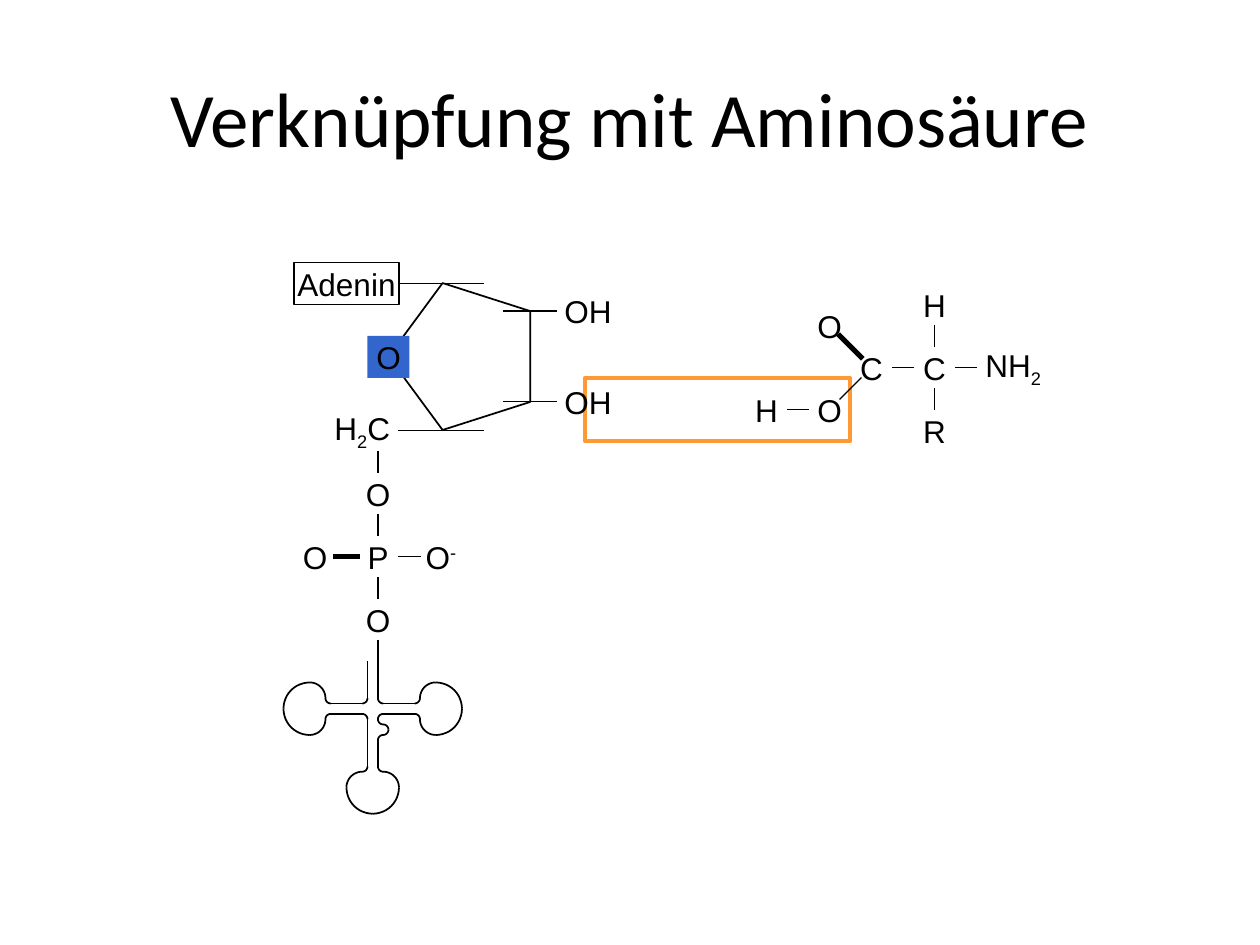
from itertools import pairwise
from math import cos, pi, sin

from lxml.etree import SubElement
from pptx import Presentation
from pptx.dml.color import RGBColor
from pptx.enum.shapes import MSO_CONNECTOR as Conn, MSO_SHAPE as Shape
from pptx.enum.text import MSO_ANCHOR as Anchor, PP_ALIGN as Align
from pptx.oxml.ns import qn
from pptx.util import Inches, Pt

UNIT = Inches(1) // 24
BOX = 8
BLACK, BLUE, ORANGE = "000000", "3366CC", "FF9933"
SUB, SUPER = -25, 30

TITLE = ("Verknüpfung mit Aminosäure", 12, 7.2, 216, 30)
FRAME = (111.4, 72, 50.6, 12)
RING = (73.5, 54.4, 28, 27)

# runs, left, top, width, fill, line
ATOMS = [
    (["P"], 68, 102, BOX, None, None),
    (["O"], 68, 114, BOX, None, None),
    (["O"], 56, 102, BOX, None, None),
    (["O", ("-", SUPER)], 80, 102, BOX, None, None),
    (["O"], 68, 90, BOX, None, None),
    (["H", ("2", SUB), "C"], 62, 78, 14, None, None),
    (["O"], 70, 64, BOX, BLUE, None),
    (["OH"], 106, 72.5, 12, None, None),
    (["OH"], 106, 55.25, 12, None, None),
    (["Adenin"], 56, 50, 20, None, BLACK),
    (["C"], 162, 66, BOX, None, None),
    (["C"], 174, 66, BOX, None, None),
    (["O"], 154, 58, BOX, None, None),
    (["O"], 154, 74, BOX, None, None),
    (["H"], 142, 74, BOX, None, None),
    (["H"], 174, 54, BOX, None, None),
    (["R"], 174, 78, BOX, None, None),
    (["NH", ("2", SUB)], 186, 66, 14, None, None),
]

BONDS = [
    ((72, 114), (72, 110), 1), ((68, 106), (64, 106), 3),
    ((76, 106), (80, 106), 1), ((72, 102), (72, 98), 1),
    ((72, 90), (72, 86), 1), ((76, 82), (92, 82), 1),
    ((96, 76.5), (106, 76.5), 1), ((96, 59.25), (106, 59.25), 1),
    ((76, 54), (92, 54), 1),
    ((178, 66), (178, 62), 1), ((178, 78), (178, 74), 1),
    ((170, 70), (174, 70), 1), ((182, 70), (186, 70), 1),
    ((164, 68), (160, 64), 3), ((160, 76), (164, 72), 0.75),
    ((150, 78), (154, 78), 1),
]

TRNA = [
    (72, 122), (72, 133), (73, 134), (79, 134), (80, 133), (83, 130),
    (88, 135), (83, 140), (80, 137), (79, 136), (73, 136), (72, 137),
    (73, 138), (74, 139), (73, 140), (72, 141), (72, 146), (73, 147),
    (76, 150), (71, 155), (66, 150), (69, 147), (70, 146), (70, 137),
    (69, 136), (63, 136), (62, 137), (59, 140), (54, 135), (59, 130),
    (62, 133), (63, 134), (69, 134), (70, 133), (70, 126),
]


def emu(*values):
    return [round(v * UNIT) for v in values]


def rgb(color):
    return RGBColor.from_string(color)


def style(sp, fill=None, line=None, width=1):
    sp.shadow.inherit = False
    if fill:
        sp.fill.solid()
        sp.fill.fore_color.rgb = rgb(fill)
    else:
        sp.fill.background()
    if line:
        sp.line.color.rgb = rgb(line)
        sp.line.width = Pt(width)
    else:
        sp.line.fill.background()


def write(sp, runs, font, size, wrap=False):
    tf = sp.text_frame
    tf.word_wrap = wrap
    tf.vertical_anchor = Anchor.MIDDLE
    tf.margin_left = tf.margin_right = tf.margin_top = tf.margin_bottom = 0
    p = tf.paragraphs[0]
    p.alignment = Align.CENTER
    p.font.name, p.font.size, p.font.color.rgb = font, Pt(size), rgb(BLACK)
    for run in runs:
        text, shift = (run, 0) if isinstance(run, str) else run
        r = p.add_run()
        r.text = text
        if shift:
            r._r.get_or_add_rPr().set("baseline", str(shift * 1000))


def add_atom(shapes, sites, runs, x, y, w, fill, line):
    box = emu(x, y, w, BOX)
    if fill or line:
        sp = shapes.add_shape(Shape.RECTANGLE, *box)
        style(sp, fill, line)
    else:
        sp = shapes.add_textbox(*box)
    write(sp, runs, "Arial", 18)
    middles = [(x + w / 2, y), (x, y + BOX / 2),
               (x + w / 2, y + BOX), (x + w, y + BOX / 2)]
    sites.update({point: (sp, i) for i, point in enumerate(middles)})


def add_line(shapes, sites, start, end, width=1):
    c = shapes.add_connector(Conn.STRAIGHT, *emu(*start, *end))
    c.line.color.rgb = rgb(BLACK)
    c.line.width = Pt(width)
    pr = c._element.spPr
    pr.find(qn("a:ln")).set("cap", "sq")
    SubElement(pr, qn("a:effectLst"))
    if start in sites:
        c.begin_connect(*sites[start])
    if end in sites:
        c.end_connect(*sites[end])


def add_arc(shapes, start, end, vertical, steps=12):
    (x, y), (dx, dy) = start, (end[0] - start[0], end[1] - start[1])
    points = []
    for i in range(steps + 1):
        along, across = sin(i / steps * pi / 2), 1 - cos(i / steps * pi / 2)
        fx, fy = (across, along) if vertical else (along, across)
        points.append(emu(x + dx * fx, y + dy * fy))
    fb = shapes.build_freeform(*points[0])
    fb.add_line_segments(points[1:], close=False)
    style(fb.convert_to_shape(), line=BLACK)


def add_outline(shapes, sites, points):
    vertical = True
    for start, end in pairwise(points):
        if start[0] == end[0] or start[1] == end[1]:
            add_line(shapes, sites, start, end)
        else:
            add_arc(shapes, start, end, vertical)
            vertical = not vertical


def main():
    """Build the slide on linking a tRNA with an amino acid."""
    prs = Presentation()
    prs.slide_width, prs.slide_height = Inches(10), Inches(7.5)
    shapes = prs.slides.add_slide(prs.slide_layouts[6]).shapes
    sites = {}

    frame = shapes.add_shape(Shape.RECTANGLE, *emu(*FRAME))
    style(frame, line=ORANGE, width=2.25)
    title, *box = TITLE
    write(shapes.add_textbox(*emu(*box)), [title], "Calibri", 44, wrap=True)
    ring = shapes.add_shape(Shape.REGULAR_PENTAGON, *emu(*RING))
    ring.rotation = 270
    style(ring, line=BLACK)

    for atom in ATOMS:
        add_atom(shapes, sites, *atom)
    for bond in BONDS:
        add_line(shapes, sites, *bond)
    add_outline(shapes, sites, TRNA)
    prs.save("out.pptx")


if __name__ == "__main__":
    main()
